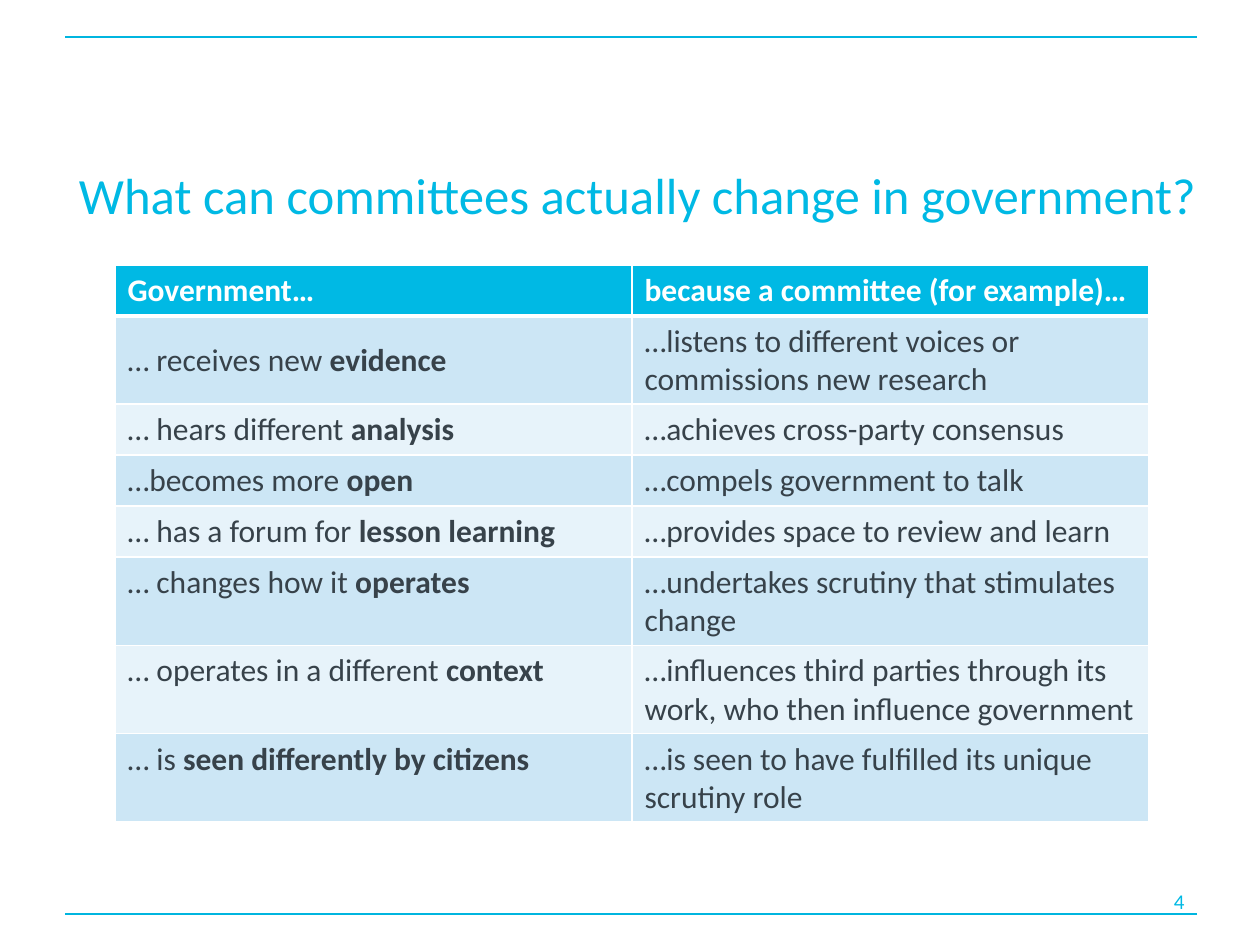
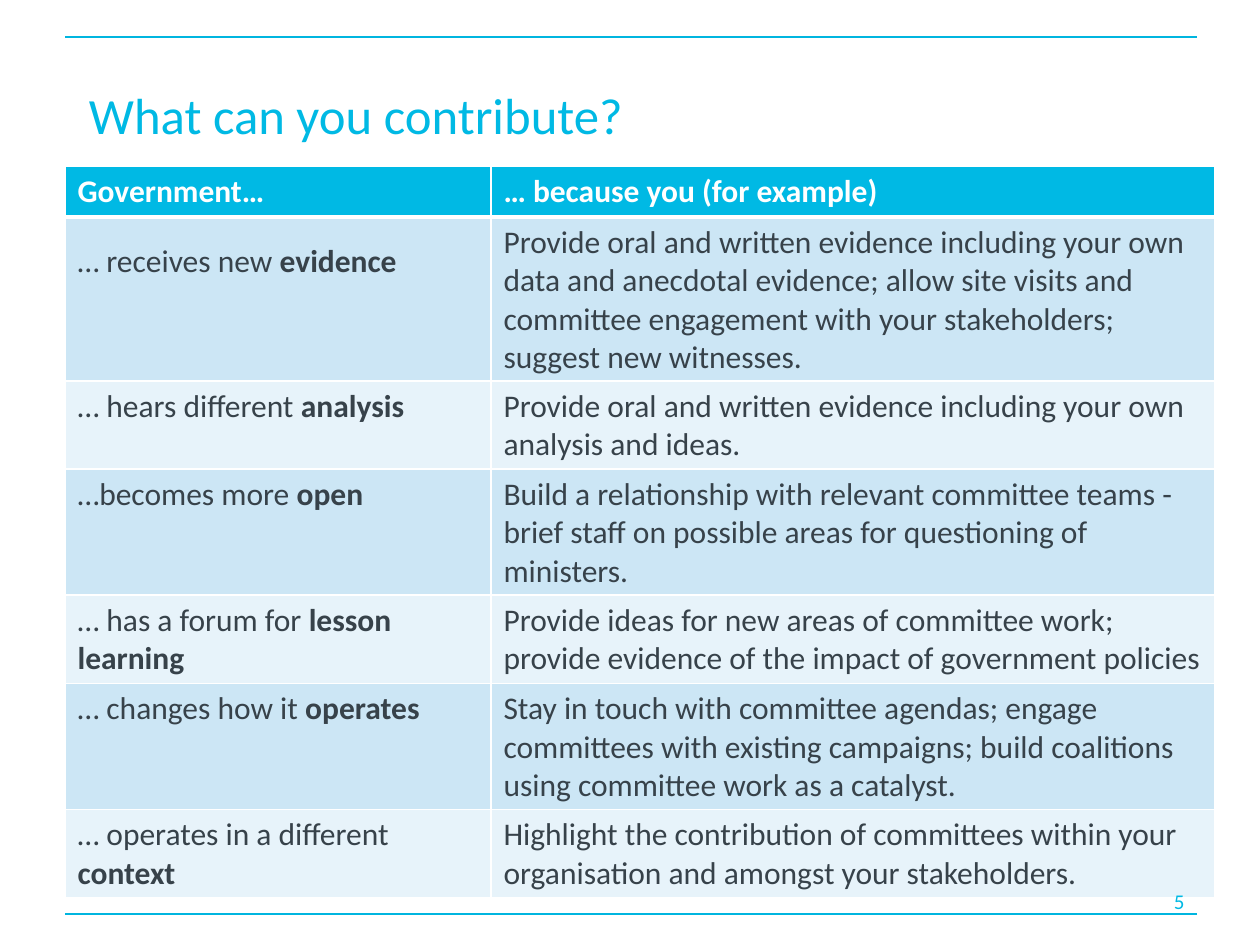
from dataclasses import dataclass

from lxml import etree
from pptx import Presentation
from pptx import util as u
from pptx.dml.color import RGBColor
from pptx.enum import shapes, text
from pptx.oxml import ns

PX_PER_INCH = 126


@dataclass(frozen=True)
class Theme:
    font: str = "Calibri"
    accent: str = "00B9E4"
    rule: str = "00B5DF"
    ink: str = "37424A"
    white: str = "FFFFFF"
    bands: tuple = ("CCE6F5", "E7F3FA")
    title_size: int = 29
    table_size: int = 18
    number_size: int = 12


THEME = Theme()

# What changes in government: plain words, then the words in bold
CHANGES = [
    ("… receives new ", "evidence"),
    ("… hears different ", "analysis"),
    ("…becomes more ", "open"),
    ("… has a forum for ", "lesson learning"),
    ("… changes how it ", "operates"),
    ("… operates in a different ", "context"),
    ("… is ", "seen differently by citizens"),
]

COMMITTEE_ACTIONS = [
    "…listens to different voices or commissions new research",
    "…achieves cross-party consensus",
    "…compels government to talk",
    "…provides space to review and learn",
    "…undertakes scrutiny that stimulates change",
    "…influences third parties through its work, who then influence government",
    "…is seen to have fulfilled its unique scrutiny role",
]

YOUR_ACTIONS = [
    "Provide oral and written evidence including your own data and anecdotal "
    "evidence; allow site visits and committee engagement with your "
    "stakeholders; suggest new witnesses.",
    "Provide oral and written evidence including your own analysis and ideas.",
    "Build a relationship with relevant committee teams - brief staff on "
    "possible areas for questioning of ministers.",
    "Provide ideas for new areas of committee work; provide evidence of the "
    "impact of government policies",
    "Stay in touch with committee agendas; engage committees with existing "
    "campaigns; build coalitions using committee work as a catalyst.",
    "Highlight the contribution of committees within your organisation and "
    "amongst your stakeholders.",
]


def px(length):
    return u.Inches(length / PX_PER_INCH)


def style_font(font, size, color, bold=None):
    font.name = THEME.font
    font.size = u.Pt(size)
    font.color.rgb = RGBColor.from_string(color)
    font.bold = bold


def add_rule(slide, y):
    line = slide.shapes.add_connector(
        shapes.MSO_CONNECTOR.STRAIGHT, px(1197), px(y), px(65), px(y))
    line.line.color.rgb = RGBColor.from_string(THEME.rule)
    line.line.width = u.Pt(0.75)
    etree.SubElement(line._element.spPr, ns.qn("a:effectLst"))


def add_label(slide, box, words, size):
    shape = slide.shapes.add_textbox(*map(px, box))
    frame = shape.text_frame
    frame.word_wrap = True
    paragraph = frame.paragraphs[0]
    paragraph.text = words
    style_font(paragraph.font, size, THEME.accent)
    return frame


def add_title(slide, left, top, width, words):
    frame = add_label(slide, (left, top, width, 87), words, THEME.title_size)
    frame.margin_left = px(5)
    frame.margin_top = px(9)


def add_slide_number(slide, number):
    frame = add_label(slide, (903, 876, 294, 50), str(number), THEME.number_size)
    frame.vertical_anchor = text.MSO_ANCHOR.MIDDLE
    frame.paragraphs[0].alignment = text.PP_ALIGN.RIGHT


def paint_cell(cell, fill, bottom=1):
    """White borders go in before the fill, as the schema orders them."""
    properties = cell._tc.get_or_add_tcPr()
    for side, width in (("L", 1), ("R", 1), ("T", 1), ("B", bottom)):
        border = etree.SubElement(
            properties, ns.qn(f"a:ln{side}"), w=str(u.Pt(width)))
        solid = etree.SubElement(border, ns.qn("a:solidFill"))
        etree.SubElement(solid, ns.qn("a:srgbClr"), val=THEME.white)
    cell.fill.solid()
    cell.fill.fore_color.rgb = RGBColor.from_string(fill)


def write_cell(cell, color, plain="", bold=""):
    paragraph = cell.text_frame.paragraphs[0]
    for words, is_bold in ((plain, False), (bold, True)):
        if words:
            run = paragraph.add_run()
            run.text = words
            style_font(run.font, THEME.table_size, color, is_bold)
    return paragraph


def add_change_table(slide, left, top, widths, heading, actions):
    row_height = 51
    row_count = len(actions) + 1
    table = slide.shapes.add_table(
        row_count, 2, px(left), px(top),
        px(sum(widths)), px(row_height * row_count)).table
    table.horz_banding = False
    for column, width in zip(table.columns, widths):
        column.width = px(width)
    for row in table.rows:
        row.height = px(row_height)

    # Header row
    for column, words in enumerate(("Government…", heading)):
        cell = table.cell(0, column)
        write_cell(cell, THEME.white, bold=words)
        paint_cell(cell, THEME.accent, bottom=3)

    # One row for each change; the first one is set with wider leading
    for index, (change, action) in enumerate(zip(CHANGES, actions)):
        change_cell, action_cell = table.rows[index + 1].cells
        paragraph = write_cell(change_cell, THEME.ink, *change)
        if index == 0:
            paragraph.line_spacing = 1.5
        write_cell(action_cell, THEME.ink, action)
        for cell in (change_cell, action_cell):
            paint_cell(cell, THEME.bands[index % 2])


def add_ruled_slide(presentation):
    slide = presentation.slides.add_slide(presentation.slide_layouts[6])
    for y in (37, 914):
        add_rule(slide, y)
    return slide


def main():
    presentation = Presentation()
    presentation.slide_width = px(1260)
    presentation.slide_height = px(945)

    # What committees change
    slide = add_ruled_slide(presentation)
    add_title(slide, 74, 155, 1235, "What can committees actually change in government?")
    add_change_table(slide, 115, 265, (517, 517),
                     "because a committee (for example)…", COMMITTEE_ACTIONS)
    add_slide_number(slide, 4)

    # What the audience contributes
    slide = add_ruled_slide(presentation)
    add_title(slide, 84, 75, 973, "What can you contribute?")
    add_change_table(slide, 65, 166, (426, 724),
                     "… because you (for example)", YOUR_ACTIONS)
    add_slide_number(slide, 5)

    presentation.save("out.pptx")


if __name__ == "__main__":
    main()
